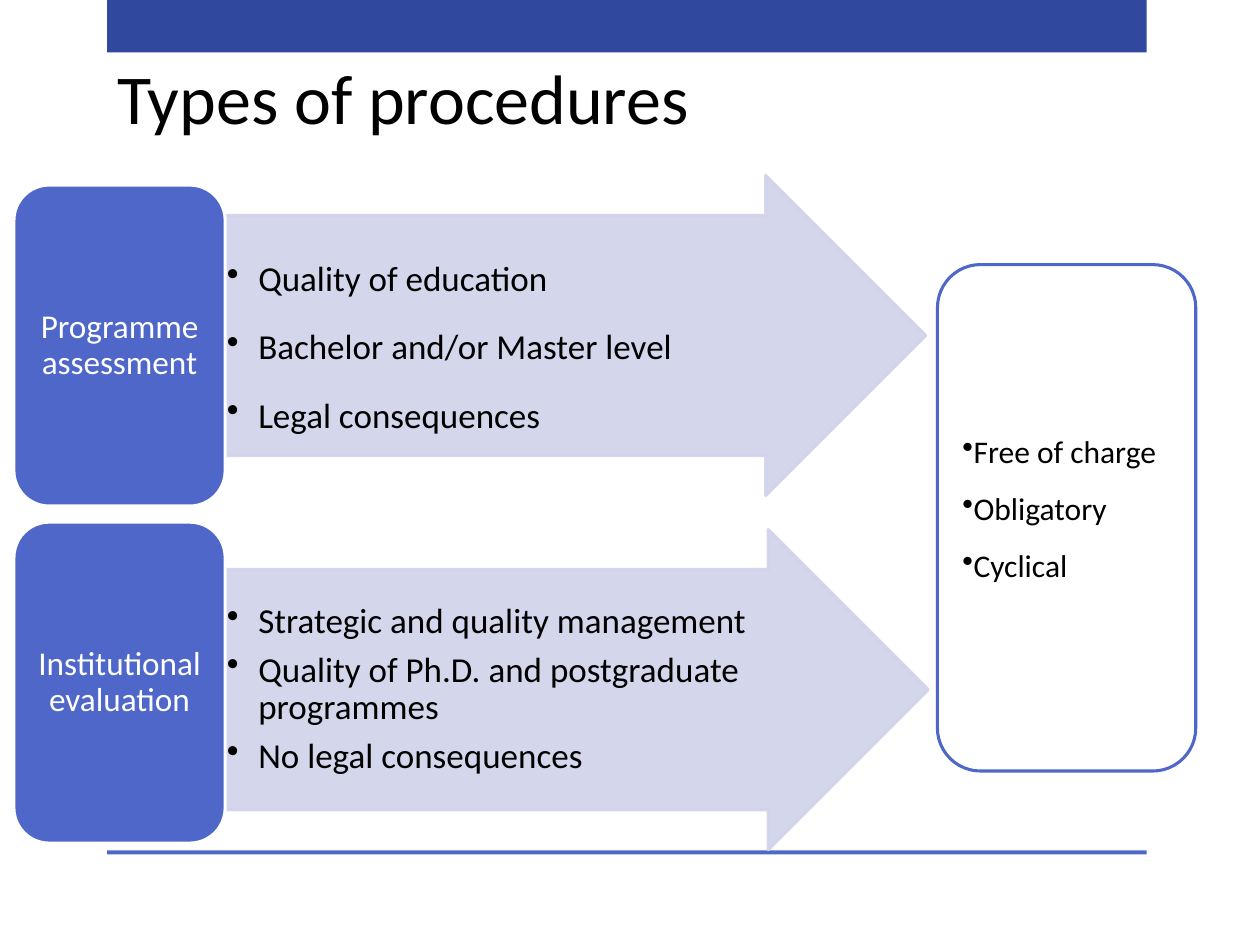
import pptx
import pptx.util
import pptx.dml.color
import pptx.enum.shapes
import pptx.enum.text
import pptx.oxml
import pptx.oxml.ns

Pt = pptx.util.Pt
SHAPES = pptx.enum.shapes.MSO_SHAPE
ALIGN = pptx.enum.text.PP_ALIGN
ANCHOR = pptx.enum.text.MSO_ANCHOR

# Content
heading = "Types of procedures"
procedures = [
    {"label": "Programme assessment",
     "points": ["Quality of education", "Bachelor and/or Master level",
                "Legal consequences"],
     "top": 105.8, "arrow_top": 100.2, "arrow_width": 400.3,
     "spacing": {"line_spacing": 1.5, "space_after": Pt(3)}},
    {"label": "Institutional evaluation",
     "points": ["Strategic and quality management",
                "Quality of Ph.D. and postgraduate programmes",
                "No legal consequences"],
     "top": 298.4, "arrow_top": 302.6, "arrow_width": 401.8,
     "spacing": {"line_spacing": 0.9, "space_after": Pt(6)}},
]
common_features = ["Free of charge", "Obligatory", "Cyclical"]

THEME = {
    "font": "Calibri",
    "band": "31489F", "accent": "4E67C8", "pale": "D0D3EB",
    "white": "FFFFFF", "black": "000000",
    "title": 40, "point": 20, "label": 19, "feature": 18,
    "outline": 1.75,
}

# Layout in points
LABEL_LEFT, LABEL_WIDTH, LABEL_HEIGHT = 8, 120.7, 183.4
ARROW_LEFT = LABEL_LEFT + LABEL_WIDTH
ARROW_HEIGHT = 183
BULLET_INDENT = 18


def colour(name):
    return pptx.dml.color.RGBColor.from_string(THEME[name])


def set_alpha(color_format_parent, percent):
    for rgb in color_format_parent.iter(pptx.oxml.ns.qn("a:srgbClr")):
        alpha = pptx.oxml.parse_xml(
            f'<a:alpha {pptx.oxml.ns.nsdecls("a")} val="{percent * 1000}"/>')
        rgb.append(alpha)


def add_block(kind, box, fill, line=None):
    block = slide.shapes.add_shape(kind, *(Pt(v) for v in box))
    block.shadow.inherit = False
    block.fill.solid()
    block.fill.fore_color.rgb = colour(fill)
    if line:
        block.line.color.rgb = colour(line)
        block.line.width = Pt(THEME["outline"])
    else:
        block.line.fill.background()
    return block


def add_bullet(paragraph, indent):
    properties = paragraph._p.get_or_add_pPr()
    properties.set("marL", str(Pt(indent)))
    properties.set("indent", str(-Pt(indent)))
    properties.append(pptx.oxml.parse_xml(
        f'<a:buChar {pptx.oxml.ns.nsdecls("a")} char="•"/>'))


def write(block, lines, size, ink, frame_format, paragraph_format, indent=None):
    """Fill a shape with paragraphs; a given indent makes them bulleted."""
    frame = block.text_frame
    frame.word_wrap = True
    for name, value in frame_format.items():
        setattr(frame, name, value)
    for number, line in enumerate(lines):
        paragraph = frame.paragraphs[0] if number == 0 else frame.add_paragraph()
        paragraph.text = line
        if indent is not None:
            add_bullet(paragraph, indent)
        for name, value in paragraph_format.items():
            setattr(paragraph, name, value)
        for name, value in {"name": THEME["font"], "size": Pt(THEME[size])}.items():
            setattr(paragraph.runs[0].font, name, value)
        paragraph.runs[0].font.color.rgb = colour(ink)


def insets(side, end):
    return {"margin_left": Pt(side), "margin_right": Pt(side),
            "margin_top": Pt(end), "margin_bottom": Pt(end),
            "vertical_anchor": ANCHOR.MIDDLE}


presentation = pptx.Presentation()
presentation.slide_width, presentation.slide_height = Pt(720), Pt(540)
slide = presentation.slides.add_slide(presentation.slide_layouts[6])

# Top band and bottom rule
add_block(SHAPES.RECTANGLE, (61.2, 0, 594, 30), "band")
add_block(SHAPES.RECTANGLE, (61.2, 486, 594, 2.2), "accent")

# Each procedure: an arrow with its points, then its label
for procedure in procedures:
    arrow = add_block(
        SHAPES.RIGHT_ARROW,
        (ARROW_LEFT, procedure["arrow_top"], procedure["arrow_width"], ARROW_HEIGHT),
        "pale", "pale")
    arrow.adjustments[0], arrow.adjustments[1] = 0.75, 0.5
    set_alpha(arrow._element.spPr, 90)
    write(arrow, procedure["points"], "point", "black", insets(0.9, 0.9),
          {"alignment": ALIGN.LEFT, **procedure["spacing"]}, BULLET_INDENT)

    label = add_block(
        SHAPES.ROUNDED_RECTANGLE,
        (LABEL_LEFT, procedure["top"], LABEL_WIDTH, LABEL_HEIGHT),
        "accent", "white")
    write(label, [procedure["label"]], "label", "white", insets(5.7, 2.9),
          {"alignment": ALIGN.CENTER, "line_spacing": 0.9})

# Features shared by both procedures, set slightly above the middle
features = add_block(SHAPES.ROUNDED_RECTANGLE, (535.7, 151.2, 147.6, 289.4),
                     "white", "accent")
write(features, common_features, "feature", "black",
      {**insets(7.2, 3.6), "margin_bottom": Pt(25.6)},
      {"alignment": ALIGN.LEFT, "line_spacing": 1.5}, 0)

# Title
title = slide.shapes.add_textbox(Pt(59.8), Pt(9.4), Pt(534.2), Pt(73.4))
write(title, [heading], "title", "black",
      {"vertical_anchor": ANCHOR.BOTTOM}, {"alignment": ALIGN.LEFT})

presentation.save("out.pptx")
